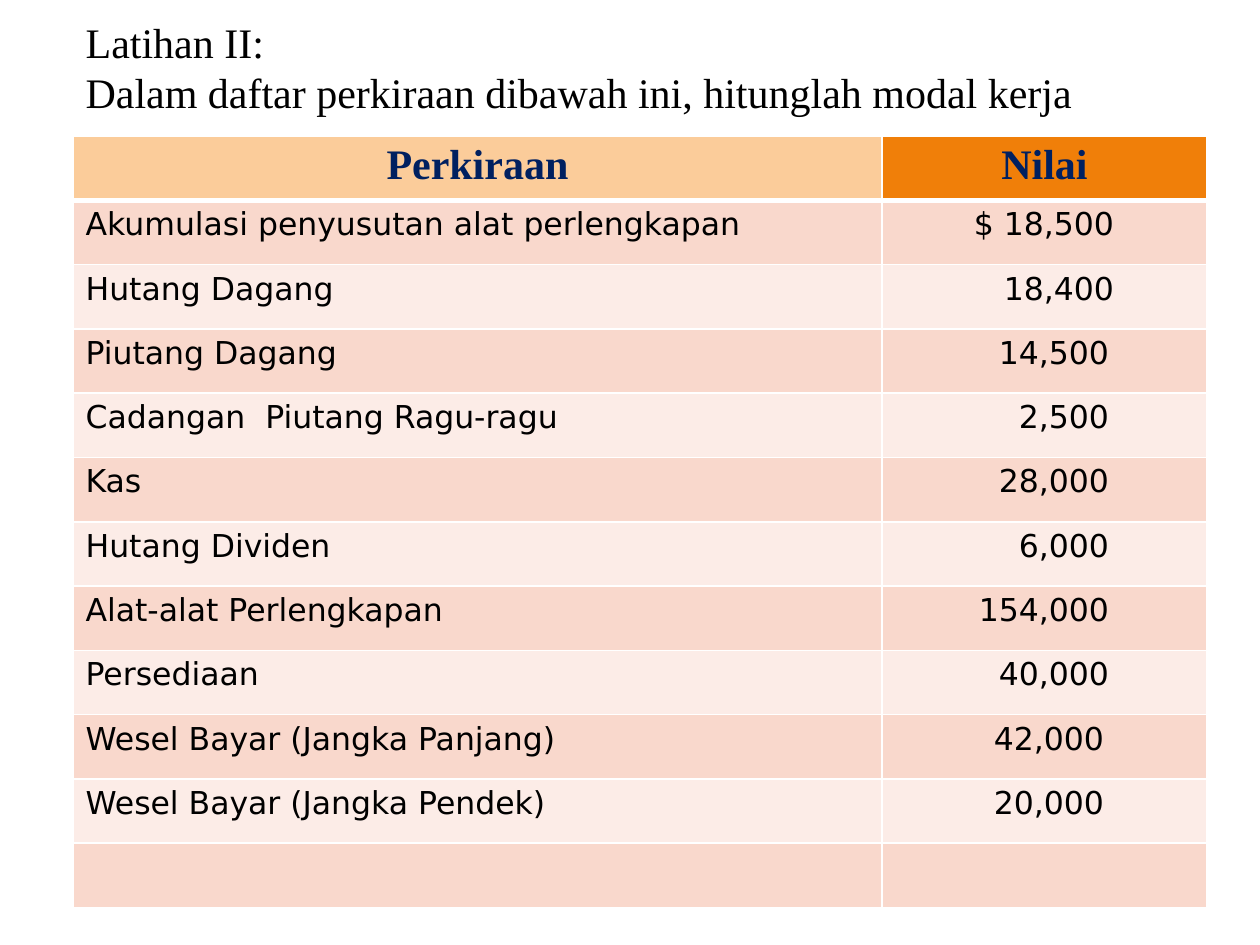
from lxml.etree import SubElement
from pptx import Presentation
from pptx.dml.color import RGBColor
from pptx.enum.text import MSO_ANCHOR as Anchor, MSO_AUTO_SIZE as AutoSize, PP_ALIGN as Align
from pptx.oxml.ns import qn
from pptx.util import Emu, Pt

PX = 914400 // 126
SLIDE = (1260, 945)
TITLE_BOX = (73, 6, 1124, 122)
TABLE_BOX = (73, 136, 1134, 772)
COLUMN_WIDTHS = (809, 325)

TITLE = ["Latihan II:", "Dalam daftar perkiraan dibawah ini, hitunglah modal kerja"]
HEADERS = [("Perkiraan", "FBCC9A"), ("Nilai", "F07F09")]
ACCOUNTS = [
    ("Akumulasi penyusutan alat perlengkapan", "$ 18,500", 93),
    ("Hutang Dagang", "18,400", 93),
    ("Piutang Dagang", "14,500", 98),
    ("Cadangan  Piutang Ragu-ragu", "2,500", 98),
    ("Kas", "28,000", 98),
    ("Hutang Dividen", "6,000", 98),
    ("Alat-alat Perlengkapan", "154,000", 98),
    ("Persediaan", "40,000", 98),
    ("Wesel Bayar (Jangka Panjang)", "42,000", 103),
    ("Wesel Bayar (Jangka Pendek)", "20,000", 103),
    ("", "", 98),
]
BANDS = ("F9D8CC", "FCECE7")
BORDER = "FFFFFF"

TITLE_FONT = {"name": "Times New Roman", "size": Pt(24), "bold": False}
HEADER_FONT = {"name": "Times New Roman", "size": Pt(24), "bold": True}
BODY_FONT = {"name": "DejaVu Sans", "size": Pt(18), "bold": False}


def px(value):
    return Emu(round(value * PX))


def color(value):
    return RGBColor.from_string(value)


def write(para, text, font, ink, align):
    para.alignment = align
    target = para.font
    if text:
        span = para.add_run()
        span.text = text
        target = span.font
    for name, value in font.items():
        setattr(target, name, value)
    target.color.rgb = color(ink)


def style_cell(cell, fill, top=1, bottom=1):
    properties = cell._tc.get_or_add_tcPr()
    for side, width in (("L", 1), ("R", 1), ("T", top), ("B", bottom)):
        line = SubElement(properties, qn(f"a:ln{side}"), w=str(Pt(width)))
        solid = SubElement(line, qn("a:solidFill"))
        SubElement(solid, qn("a:srgbClr"), val=BORDER)
    cell.fill.solid()
    cell.fill.fore_color.rgb = color(fill)


def add_title(page):
    title = page.shapes.title
    title.left, title.top, title.width, title.height = map(px, TITLE_BOX)
    frame = title.text_frame
    settings = {"word_wrap": True, "auto_size": AutoSize.NONE, "vertical_anchor": Anchor.MIDDLE}
    for name, value in settings.items():
        setattr(frame, name, value)
    for index, text in enumerate(TITLE):
        para = frame.add_paragraph() if index else frame.paragraphs[0]
        para.space_before = Pt(0)
        write(para, text, TITLE_FONT, "000000", Align.LEFT)


def add_accounts(page):
    row_count = len(ACCOUNTS) + 1
    table = page.shapes.add_table(row_count, len(HEADERS), *map(px, TABLE_BOX)).table
    for column, width in zip(table.columns, COLUMN_WIDTHS):
        column.width = px(width)
    for row in table.rows:
        row.height = px(TABLE_BOX[3] / row_count)

    for cell, (text, fill) in zip(table.rows[0].cells, HEADERS):
        style_cell(cell, fill, bottom=3)
        write(cell.text_frame.paragraphs[0], text, HEADER_FONT, "002060", Align.CENTER)

    for index, (account, amount, inset) in enumerate(ACCOUNTS):
        cells = table.rows[index + 1].cells
        for cell, text, align in zip(cells, (account, amount), (Align.LEFT, Align.RIGHT)):
            style_cell(cell, BANDS[index % 2], top=1 if index else 3)
            write(cell.text_frame.paragraphs[0], text, BODY_FONT, "000000", align)
        cells[1].margin_right = px(inset)


def main():
    deck = Presentation()
    deck.slide_width, deck.slide_height = map(px, SLIDE)
    page = deck.slides.add_slide(deck.slide_layouts.get_by_name("Title Only"))
    add_title(page)
    add_accounts(page)
    deck.save("out.pptx")


if __name__ == "__main__":
    main()
